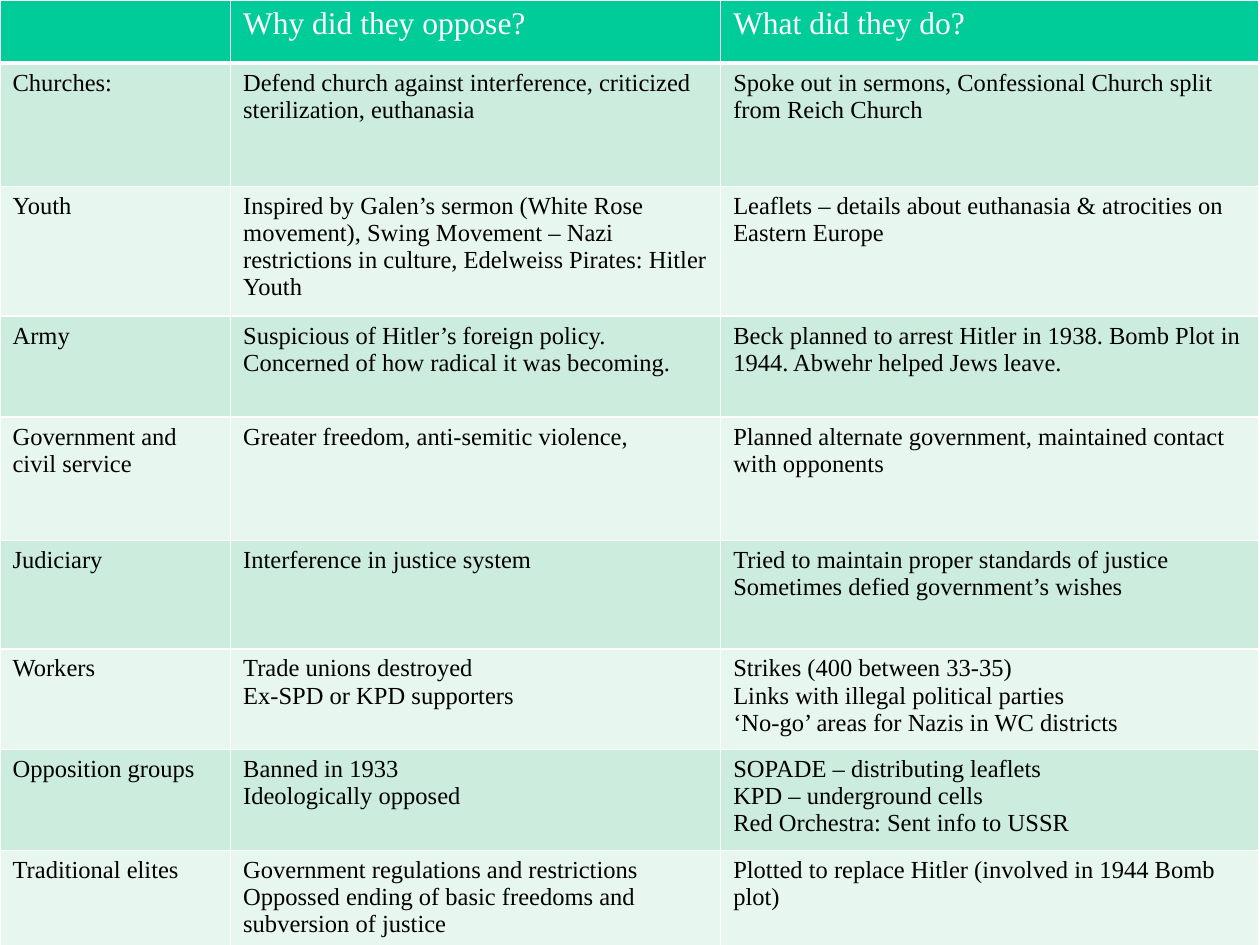
from dataclasses import dataclass
from lxml.etree import SubElement as Sub
from pptx import Presentation
from pptx.dml.color import RGBColor as Rgb
from pptx.oxml.ns import qn
from pptx.util import Inches, Pt


@dataclass
class Theme:
    font: str = "Times New Roman"
    head: str = "00CC99"
    odd: str = "CCECDE"
    even: str = "E7F6EF"
    white: str = "FFFFFF"
    black: str = "000000"
    big: int = 18
    body: int = 14
    thin: int = 1
    thick: int = 3


def add_line(cell, side, width):
    line = Sub(cell._tc.get_or_add_tcPr(), qn("a:ln" + side), w=str(Pt(width)))
    Sub(Sub(line, qn("a:solidFill")), qn("a:srgbClr"), val=theme.white)


theme = Theme()
widths = [1.83, 3.89, 4.27]
heights = [0.5, 0.98, 1.03, 0.8, 0.98, 0.86, 0.8, 0.8, 0.8]
rows = [
    ("", "Why did they oppose?", "What did they do?"),
    ("Churches:",
     "Defend church against interference, criticized sterilization, euthanasia",
     "Spoke out in sermons, Confessional Church split from Reich Church"),
    ("Youth",
     "Inspired by Galen’s sermon (White Rose movement), Swing Movement – Nazi "
     "restrictions in culture, Edelweiss Pirates: Hitler Youth",
     "Leaflets – details about euthanasia & atrocities on Eastern Europe"),
    ("Army",
     "Suspicious of Hitler’s foreign policy. Concerned of how radical it was becoming.",
     "Beck planned to arrest Hitler in 1938. Bomb Plot in 1944. Abwehr helped Jews leave."),
    ("Government and civil service",
     "Greater freedom, anti-semitic violence,",
     "Planned alternate government, maintained contact with opponents"),
    ("Judiciary",
     "Interference in justice system",
     "Tried to maintain proper standards of justice\nSometimes defied government’s wishes"),
    ("Workers",
     "Trade unions destroyed\nEx-SPD or KPD supporters",
     "Strikes (400 between 33-35)\nLinks with illegal political parties\n"
     "‘No-go’ areas for Nazis in WC districts"),
    ("Opposition groups",
     "Banned in 1933\nIdeologically opposed",
     "SOPADE – distributing leaflets\nKPD – underground cells\n"
     "Red Orchestra: Sent info to USSR"),
    ("Traditional elites",
     "Government regulations and restrictions\n"
     "Oppossed ending of basic freedoms and subversion of justice",
     "Plotted to replace Hitler (involved in 1944 Bomb plot)"),
]

deck = Presentation()
deck.slide_width, deck.slide_height = Inches(10), Inches(7.5)
slide = deck.slides.add_slide(deck.slide_layouts[6])
table = slide.shapes.add_table(
    len(rows), len(widths), 0, 0, Inches(sum(widths)), Inches(sum(heights))).table
for col, width in zip(table.columns, widths):
    col.width = Inches(width)

for r, texts in enumerate(rows):
    table.rows[r].height = Inches(heights[r])
    if r == 0:
        fill, ink, size = theme.head, theme.white, theme.big
    else:
        fill, ink, size = theme.odd if r % 2 else theme.even, theme.black, theme.body
    for c, text in enumerate(texts):
        cell = table.cell(r, c)
        for side in "LRTB":
            add_line(cell, side, theme.thick if r == 0 and side == "B" else theme.thin)
        cell.fill.solid()
        cell.fill.fore_color.rgb = Rgb.from_string(fill)
        cell.text_frame.text = text
        for para in cell.text_frame.paragraphs:
            for run in para.runs:
                run.font.name = theme.font
                run.font.size = Pt(size)
                run.font.bold = False
                run.font.color.rgb = Rgb.from_string(ink)

deck.save("out.pptx")
